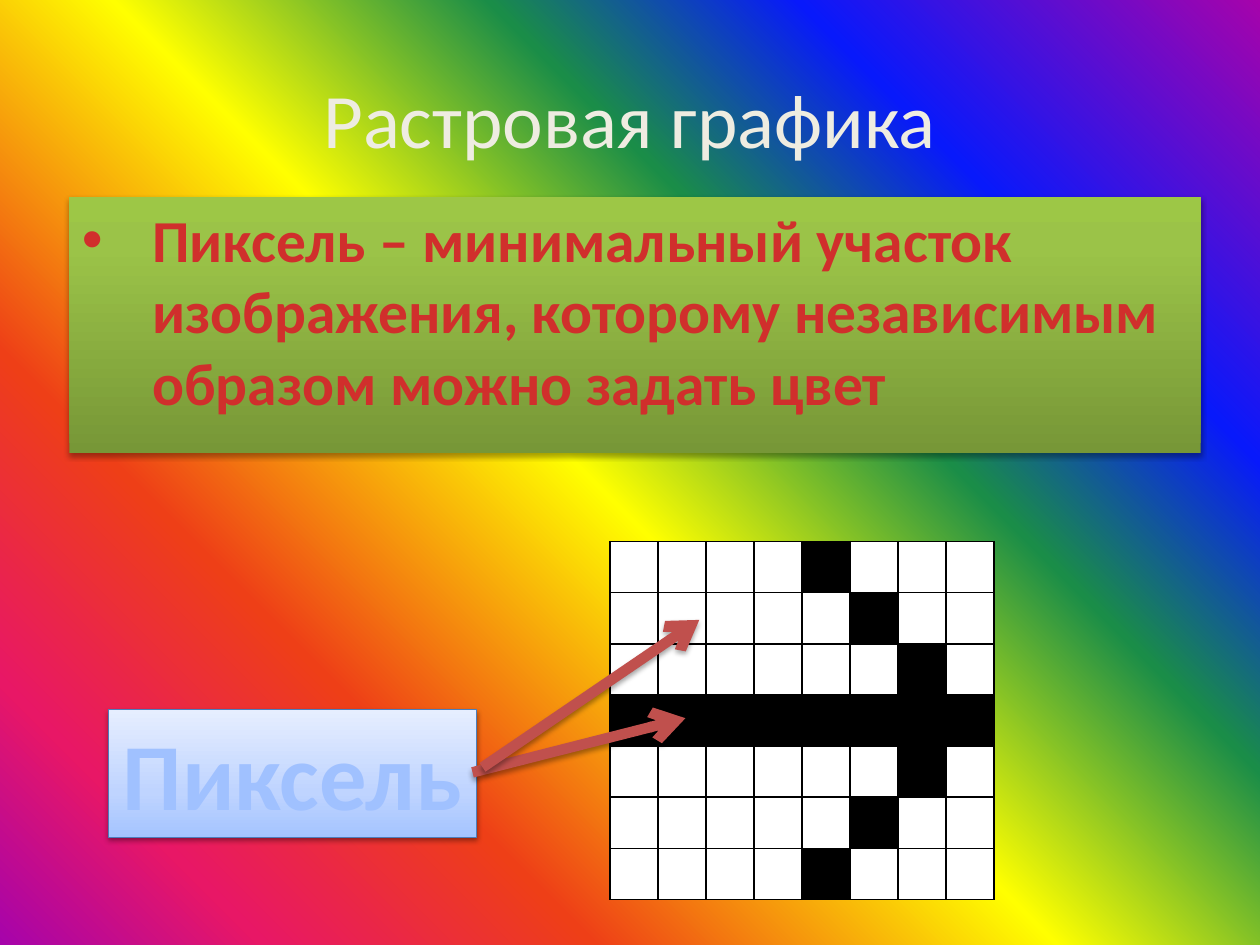
import dataclasses
import typing

import pptx
import pptx.dml.color
import pptx.enum.shapes
import pptx.enum.text
import pptx.oxml
import pptx.oxml.ns
import pptx.util

WIDE, HIGH = 10, 7.5
FONT = "Calibri"
HEX = {"cream": "EEECE1", "black": "000000", "white": "FFFFFF",
       "edge": "4B7EBC", "rim": "467AB8", "arrow": "C0504D"}
NS = pptx.oxml.ns.nsdecls("a")
TAG = pptx.oxml.ns.qn
Stops = list[tuple[int, str]]


@dataclasses.dataclass
class Box:
    """Left, top, width and height as shares of the slide."""
    left: float
    top: float
    wide: float
    high: float

    def place(self) -> tuple[int, ...]:
        return tuple(pptx.util.Inches(share * side) for share, side in zip(
            (self.left, self.top, self.wide, self.high), (WIDE, HIGH) * 2))


@dataclasses.dataclass
class Blend:
    """Gradient stops, with an angle or a round path to the top right."""
    stops: Stops
    angle: typing.Optional[int] = None


@dataclasses.dataclass
class Arrow:
    """Start and end points in inches."""
    start: tuple[float, float]
    end: tuple[float, float]


RAINBOW = Blend([(0, "A603AB"), (21, "0819FB"), (35, "1A8D48"), (52, "FFFF00"),
                 (73, "EE3F17"), (88, "E81766"), (100, "A603AB")])
GREEN = Blend([(0, "779737"), (80, "9BC348"), (100, "9DC746")], 270)
RED = Blend([(0, "FC7C7A"), (75, "D02F2C"), (100, "C70500")], 90)
SKY = Blend([(0, "A4C4FF"), (35, "BFD4FF"), (100, "E6EEFF")], 270)
BLUE = Blend([(0, "BFD3F9"), (9, "A0C1FF"), (50, "003D85"),
              (79, "A0C1FF"), (100, "BFD3F9")], 90)
ARROWS = [Arrow((3.75, 6.13), (5.44, 5.7)), Arrow((3.83, 6.09), (5.55, 4.92))]
ROWS, COLS = 7, 8


def rgb(name: str) -> pptx.dml.color.RGBColor:
    return pptx.dml.color.RGBColor.from_string(HEX[name])


def xml(text: str) -> typing.Any:
    return pptx.oxml.parse_xml(text)


def paint(fill: typing.Any, holder: typing.Any, blend: Blend) -> None:
    """Give the owner of a fill a gradient."""
    fill.solid()
    stops = "".join(f'<a:gs pos="{pos * 1000}"><a:srgbClr val="{tint}"/></a:gs>'
                    for pos, tint in blend.stops)
    if blend.angle is None:
        way = '<a:path path="circle"><a:fillToRect l="100000" b="100000"/></a:path>'
    else:
        way = f'<a:lin ang="{blend.angle * 60000}" scaled="0"/>'
    grad = xml(f'<a:gradFill {NS} rotWithShape="1"><a:gsLst>{stops}</a:gsLst>'
               f'{way}</a:gradFill>')
    holder.replace(holder.find(TAG("a:solidFill")), grad)


def shade(shape: typing.Any, alpha: int, dist: float) -> None:
    """Cast a soft shadow straight down."""
    shape._element.spPr.append(xml(
        f'<a:effectLst {NS}><a:outerShdw blurRad="{pptx.util.Pt(3.1)}" '
        f'dist="{pptx.util.Pt(dist)}" dir="5400000" rotWithShape="0">'
        f'<a:srgbClr val="{HEX["black"]}"><a:alpha val="{alpha * 1000}"/>'
        f'</a:srgbClr></a:outerShdw></a:effectLst>'))


def write(shape: typing.Any, text: str, size: int, bold: bool,
          center: bool) -> typing.Any:
    """Add one run to the first paragraph."""
    para = shape.text_frame.paragraphs[0]
    if center:
        para.alignment = pptx.enum.text.PP_ALIGN.CENTER
    run = para.add_run()
    run.text = text
    run.font.name, run.font.size, run.font.bold = FONT, pptx.util.Pt(size), bold
    return run


def move(shape: typing.Any, box: Box) -> None:
    shape.left, shape.top, shape.width, shape.height = box.place()


def draw_grid(slide: typing.Any, box: Box) -> None:
    """Draw a pixel arrow: a full middle row and a slanted head."""
    table = slide.shapes.add_table(ROWS, COLS, *box.place()).table
    table.first_row = table.horz_banding = False
    mid = ROWS // 2
    for row in range(ROWS):
        for col in range(COLS):
            cell = table.cell(row, col)
            dark = row == mid or col == COLS - 1 - abs(row - mid)
            cell.fill.solid()
            cell.fill.fore_color.rgb = rgb("black" if dark else "white")
            cell.margin_top = cell.margin_bottom = 0
            props = cell._tc.get_or_add_tcPr()
            for spot, side in enumerate("LRTB"):
                props.insert(spot, xml(
                    f'<a:ln{side} {NS} w="12700"><a:solidFill><a:srgbClr '
                    f'val="{HEX["black"]}"/></a:solidFill></a:ln{side}>'))


def draw_arrow(slide: typing.Any, arrow: Arrow) -> None:
    ends = [pptx.util.Inches(n) for n in (*arrow.start, *arrow.end)]
    line = slide.shapes.add_connector(
        pptx.enum.shapes.MSO_CONNECTOR.STRAIGHT, *ends)
    line.line.width = pptx.util.Pt(6)
    line.line.color.rgb = rgb("arrow")
    line.line._get_or_add_ln().append(xml(f'<a:tailEnd {NS} type="arrow"/>'))
    shade(line, 35, 1.8)


def main() -> None:
    deck = pptx.Presentation()
    deck.slide_width = pptx.util.Inches(WIDE)
    deck.slide_height = pptx.util.Inches(HIGH)
    slide = deck.slides.add_slide(deck.slide_layouts[1])
    back = slide.background.fill
    back.solid()
    paint(back, slide._element.cSld.bg.bgPr, RAINBOW)

    # Title
    title = slide.shapes.title
    move(title, Box(0.05, 0.04, 0.9, 0.17))
    title.text_frame.vertical_anchor = pptx.enum.text.MSO_ANCHOR.MIDDLE
    run = write(title, "Растровая графика", 44, False, True)
    run.font.color.rgb = rgb("cream")

    # Definition
    body = slide.placeholders[1]
    move(body, Box(0.055, 0.208, 0.898, 0.271))
    paint(body.fill, body._element.spPr, GREEN)
    shade(body, 35, 1.8)
    body.text_frame.auto_size = pptx.enum.text.MSO_AUTO_SIZE.NONE
    run = write(body, "Пиксель – минимальный участок изображения, которому "
                "независимым образом можно задать цвет", 34, True, False)
    paint(run.font.fill, run.font._element, RED)
    props = body.text_frame.paragraphs[0]._p.get_or_add_pPr()
    props.set("marL", str(pptx.util.Inches(0.56)))
    props.set("indent", str(pptx.util.Inches(-0.56)))
    props.append(xml(f'<a:spcBef {NS}><a:spcPct val="20000"/></a:spcBef>'))
    props.append(xml(f'<a:buFont {NS} typeface="Arial"/>'))
    props.append(xml(f'<a:buChar {NS} char="•"/>'))

    # Pixel grid
    draw_grid(slide, Box(0.484, 0.573, 0.305, 0.379))

    # Label
    label = slide.shapes.add_textbox(*Box(0.086, 0.751, 0.292, 0.135).place())
    paint(label.fill, label._element.spPr, SKY)
    label.line.color.rgb = rgb("edge")
    label.line.width = pptx.util.Pt(0.75)
    shade(label, 38, 1.6)
    label.text_frame.word_wrap = False
    label.text_frame.auto_size = pptx.enum.text.MSO_AUTO_SIZE.SHAPE_TO_FIT_TEXT
    run = write(label, "Пиксель", 54, True, True)
    paint(run.font.fill, run.font._element, BLUE)
    run.font._element.insert(0, xml(
        f'<a:ln {NS} w="{pptx.util.Pt(0.83)}"><a:solidFill><a:srgbClr '
        f'val="{HEX["rim"]}"/></a:solidFill></a:ln>'))

    # Arrows
    for arrow in ARROWS:
        draw_arrow(slide, arrow)

    deck.save("out.pptx")


if __name__ == "__main__":
    main()
